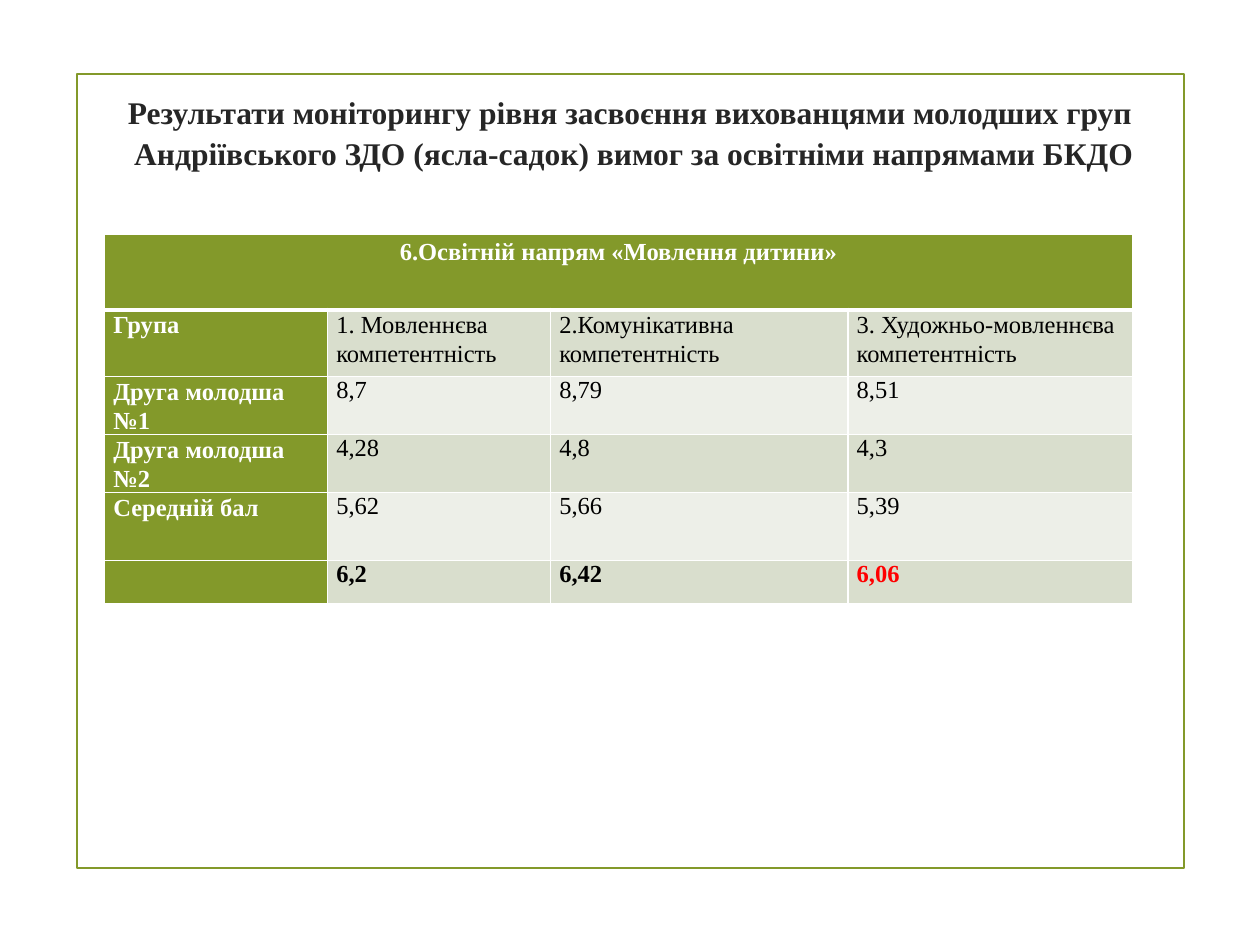
"""Build the slide with monitoring results for the younger kindergarten groups."""
from lxml import etree
from pptx import Presentation
from pptx.dml.color import RGBColor
from pptx.enum.shapes import MSO_SHAPE
from pptx.enum.text import MSO_ANCHOR, PP_ALIGN
from pptx.oxml.ns import qn
from pptx.util import Inches, Pt

GREEN = RGBColor(0x83, 0x99, 0x2A)
BAND_DARK = RGBColor(0xD9, 0xDE, 0xCD)
BAND_LIGHT = RGBColor(0xED, 0xEF, 0xE8)
WHITE = RGBColor(0xFF, 0xFF, 0xFF)
BLACK = RGBColor(0x00, 0x00, 0x00)
DARK_GREY = RGBColor(0x26, 0x26, 0x26)
RED = RGBColor(0xFF, 0x00, 0x00)


def write_text(frame, text, size=14, color=BLACK, bold=False,
               align=PP_ALIGN.LEFT, spacing=1.0, anchor=MSO_ANCHOR.TOP):
    frame.text = text
    frame.word_wrap = True
    frame.vertical_anchor = anchor
    paragraph = frame.paragraphs[0]
    paragraph.alignment = align
    paragraph.line_spacing = spacing
    paragraph.font.name = "Times New Roman"
    paragraph.font.size = Pt(size)
    paragraph.font.bold = bold
    paragraph.font.color.rgb = color


def style_cell(cell, fill, bottom=1):
    cell.margin_left = cell.margin_right = Inches(0.07)
    cell.margin_top = cell.margin_bottom = 0
    properties = cell._tc.get_or_add_tcPr()
    for side, width in (("L", 1), ("R", 1), ("T", 1), ("B", bottom)):
        border = etree.SubElement(properties, qn(f"a:ln{side}"), w=str(Pt(width)))
        solid = etree.SubElement(border, qn("a:solidFill"))
        etree.SubElement(solid, qn("a:srgbClr"), val=str(WHITE))
    cell.fill.solid()
    cell.fill.fore_color.rgb = fill


presentation = Presentation()
presentation.slide_width = Inches(10)
presentation.slide_height = Inches(7.5)
slide = presentation.slides.add_slide(presentation.slide_layouts[5])

border_frame = slide.shapes.add_shape(
    MSO_SHAPE.RECTANGLE, Inches(0.61), Inches(0.59), Inches(8.79), Inches(6.3))
border_frame.shadow.inherit = False
border_frame.fill.background()
border_frame.line.color.rgb = GREEN
border_frame.line.width = Pt(1.25)

heading = slide.shapes.title
heading.left, heading.top = Inches(0.5), Inches(0.3)
heading.width, heading.height = Inches(9), Inches(1.48)
write_text(heading.text_frame,
           "Результати моніторингу рівня засвоєння вихованцями молодших груп\v"
           " Андріївського ЗДО (ясла-садок) вимог за освітніми напрямами БКДО",
           size=18, color=DARK_GREY, bold=True, align=PP_ALIGN.CENTER,
           spacing=1.07, anchor=MSO_ANCHOR.MIDDLE)

results = [
    ["6.Освітній напрям «Мовлення дитини»", "", "", ""],
    ["Група", "1. Мовленнєва компетентність", "2.Комунікативна компетентність",
     "3. Художньо-мовленнєва компетентність"],
    ["Друга молодша №1", "8,7", "8,79", "8,51"],
    ["Друга молодша №2", "4,28", "4,8", "4,3"],
    ["Середній бал", "5,62", "5,66", "5,39"],
    ["", "6,2", "6,42", "6,06"],
]
column_widths = [1.77, 1.77, 2.36, 2.26]
row_heights = [0.6, 0.53, 0.46, 0.46, 0.54, 0.34]
scores = slide.shapes.add_table(
    len(row_heights), len(column_widths), Inches(0.83), Inches(1.86),
    Inches(sum(column_widths)), Inches(sum(row_heights))).table
for column, width in zip(scores.columns, column_widths):
    column.width = Inches(width)
for row, height in zip(scores.rows, row_heights):
    row.height = Inches(height)
scores.cell(0, 0).merge(scores.cell(0, 3))

last_row = len(results) - 1
for r, values in enumerate(results):
    for c, value in enumerate(values):
        cell = scores.cell(r, c)
        is_header = r == 0 or c == 0
        band = BAND_DARK if r % 2 else BAND_LIGHT
        style_cell(cell, GREEN if is_header else band, bottom=3 if r == 0 else 1)
        color = WHITE if is_header else RED if value == "6,06" else BLACK
        write_text(cell.text_frame, value, color=color,
                   bold=is_header or r == last_row,
                   align=PP_ALIGN.CENTER if r == 0 else PP_ALIGN.LEFT,
                   spacing=1.15 if r == 0 else 1.07 if r == 1 or c == 0 else 1.0)

presentation.save("out.pptx")
